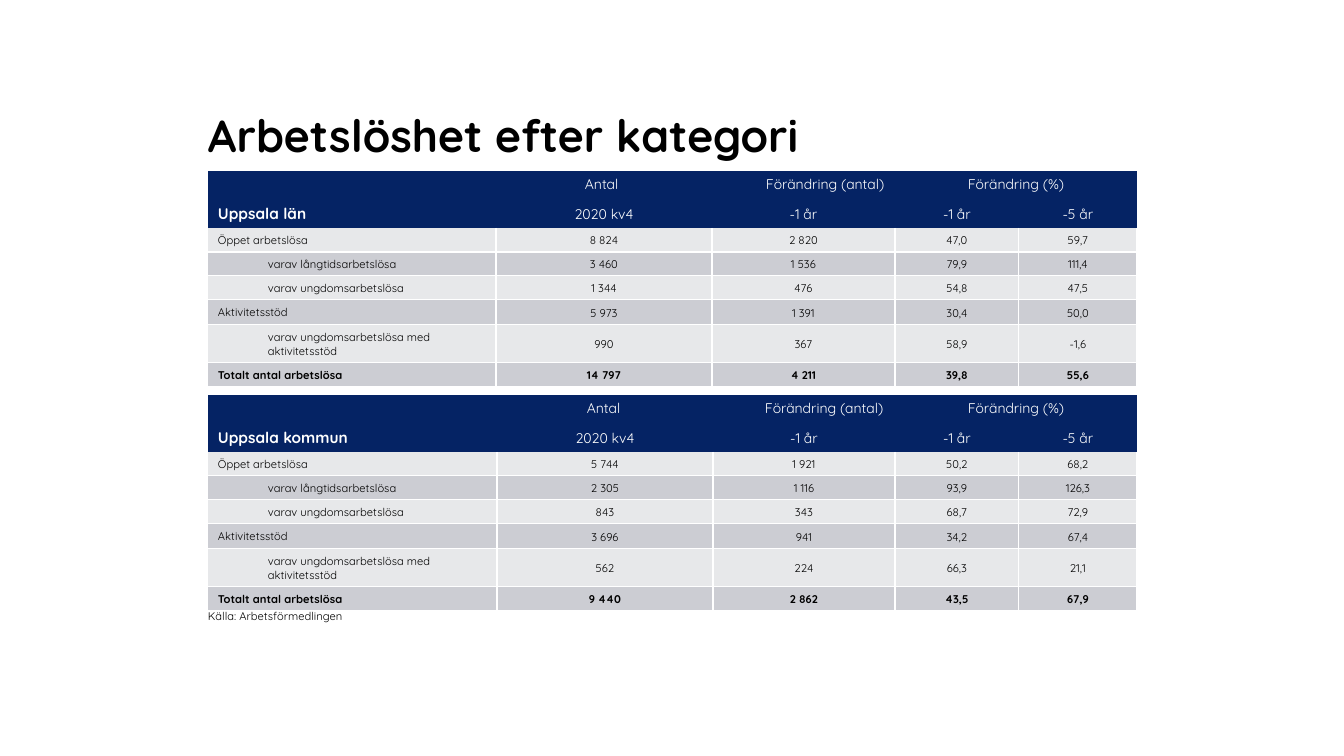
from dataclasses import dataclass

from lxml import etree
from pptx import Presentation
from pptx.dml.color import RGBColor
from pptx.enum.text import MSO_ANCHOR, MSO_AUTO_SIZE, PP_ALIGN
from pptx.oxml.ns import qn
from pptx.slide import Slide
from pptx.table import _Cell
from pptx.text.text import _Paragraph
from pptx.util import Emu, Pt

LEFT, CENTER = PP_ALIGN.LEFT, PP_ALIGN.CENTER
TOP, MIDDLE, BOTTOM = MSO_ANCHOR.TOP, MSO_ANCHOR.MIDDLE, MSO_ANCHOR.BOTTOM
GROW = MSO_AUTO_SIZE.SHAPE_TO_FIT_TEXT
SLIDE_WIDTH, SLIDE_HEIGHT = 1344, 756
SCALE = 12192000 / SLIDE_WIDTH


@dataclass(frozen=True)
class Theme:
    font: str = "Quicksand"
    black: str = "000000"
    white: str = "FFFFFF"
    navy: str = "052364"
    light: str = "E7E8EA"
    dark: str = "CCCDD3"
    title_size: int = 32
    region_size: int = 11
    header_size: int = 10
    body_size: int = 8
    border: int = 1


@dataclass(frozen=True)
class Category:
    name: str
    indented: bool = False
    bold: bool = False


@dataclass(frozen=True)
class Region:
    name: str
    top: int
    columns: tuple[int, ...]
    count_inset: int
    change_tab: int
    values: tuple[tuple[str, ...], ...]


THEME = Theme()
TABLE_LEFT = 208
ROW_HEIGHTS = (28, 29, 24, 24, 24, 25, 38, 24)
TEXT_INSETS = (10, 5, 10, 5)
NUMBER_INSETS = (1, 1, 1, 0)
INDENT = 50
PERIODS = ("2020 kv4", "-1 år", "-1 år", "-5 år")
CATEGORIES = (
    Category("Öppet arbetslösa"),
    Category("varav långtidsarbetslösa", indented=True),
    Category("varav ungdomsarbetslösa", indented=True),
    Category("Aktivitetsstöd"),
    Category("varav ungdomsarbetslösa med aktivitetsstöd", indented=True),
    Category("Totalt antal arbetslösa", bold=True),
)
REGIONS = (
    Region("Uppsala län", 171, (288, 216, 183, 124, 118), 89, 181, (
        ("8 824", "2 820", "47,0", "59,7"),
        ("3 460", "1 536", "79,9", "111,4"),
        ("1 344", "476", "54,8", "47,5"),
        ("5 973", "1 391", "30,4", "50,0"),
        ("990", "367", "58,9", "-1,6"),
        ("14 797", "4 211", "39,8", "55,6"),
    )),
    Region("Uppsala kommun", 395, (289, 216, 182, 124, 118), 90, 178, (
        ("5 744", "1 921", "50,2", "68,2"),
        ("2 305", "1 116", "93,9", "126,3"),
        ("843", "343", "68,7", "72,9"),
        ("3 696", "941", "34,2", "67,4"),
        ("562", "224", "66,3", "21,1"),
        ("9 440", "2 862", "43,5", "67,9"),
    )),
)


def px(length: int) -> Emu:
    return Emu(round(length * SCALE))


def write(para: _Paragraph, text: str, size: int, color: str, bold: bool = False) -> None:
    para.text = text
    for span in para.runs:
        span.font.name = THEME.font
        span.font.size = Pt(size)
        span.font.bold = bold
        span.font.color.rgb = RGBColor.from_string(color)


def draw_borders(cell: _Cell, sides: str) -> None:
    properties = cell._tc.get_or_add_tcPr()
    for position, side in enumerate("LRTB"):
        line = etree.Element(qn(f"a:ln{side}"), w=str(Pt(THEME.border)))
        if side in sides:
            fill = etree.SubElement(line, qn("a:solidFill"))
            etree.SubElement(fill, qn("a:srgbClr"), val=THEME.white)
        else:
            etree.SubElement(line, qn("a:noFill"))
        properties.insert(position, line)


def style_cell(cell: _Cell, fill: str, sides: str = "") -> None:
    cell.fill.solid()
    cell.fill.fore_color.rgb = RGBColor.from_string(fill)
    draw_borders(cell, sides)
    ending = etree.SubElement(cell.text_frame.paragraphs[0]._p, qn("a:endParaRPr"))
    ending.set("sz", str(THEME.body_size * 100))


def fill_cell(cell: _Cell, text: str, size: int, color: str, bold: bool = False,
              number: bool = False) -> _Paragraph:
    insets = NUMBER_INSETS if number else TEXT_INSETS
    cell.margin_left, cell.margin_top, cell.margin_right, cell.margin_bottom = map(px, insets)
    cell.vertical_anchor = MIDDLE if number else TOP
    para = cell.text_frame.paragraphs[0]
    write(para, text, size, color, bold)
    para.alignment = CENTER if number else LEFT
    return para


def draw_region(page: Slide, region: Region) -> None:
    frame = page.shapes.add_table(
        len(ROW_HEIGHTS), len(region.columns), px(TABLE_LEFT), px(region.top),
        px(sum(region.columns)), px(sum(ROW_HEIGHTS)))
    table = frame.table
    table.first_row = table.horz_banding = False
    for column, width in zip(table.columns, region.columns):
        column.width = px(width)
    for row, height in zip(table.rows, ROW_HEIGHTS):
        row.height = px(height)
    for row in range(2):
        for column in range(len(region.columns)):
            style_cell(table.cell(row, column), THEME.navy)
    for column in (1, 3):
        table.cell(0, column).merge(table.cell(0, column + 1))

    counts = table.cell(0, 1)
    para = counts.text_frame.paragraphs[0]
    tabs = etree.SubElement(para._p.get_or_add_pPr(), qn("a:tabLst"))
    etree.SubElement(tabs, qn("a:tab"), pos=str(px(region.change_tab)), algn="l")
    fill_cell(counts, "Antal\tFörändring (antal)", THEME.header_size, THEME.white)
    counts.margin_left = px(region.count_inset)
    percent = fill_cell(table.cell(0, 3), "Förändring (%)", THEME.header_size, THEME.white)
    percent.alignment = CENTER
    fill_cell(table.cell(1, 0), region.name, THEME.region_size, THEME.white, bold=True)
    for column, period in enumerate(PERIODS, 1):
        fill_cell(table.cell(1, column), period, THEME.header_size, THEME.white, number=True)

    for index, (category, values) in enumerate(zip(CATEGORIES, region.values)):
        fill = THEME.dark if index % 2 else THEME.light
        for column, text in enumerate((category.name, *values)):
            cell = table.cell(index + 2, column)
            sides = "RB" + ("T" if index else "") + ("L" if column else "")
            style_cell(cell, fill, sides)
            para = fill_cell(cell, text, THEME.body_size, THEME.black,
                             category.bold, number=column > 0)
            if category.indented and column == 0:
                para.level = 1
                para._p.get_or_add_pPr().set("marL", str(px(INDENT)))
                para._p.get_or_add_pPr().set("indent", "0")


def draw_title(page: Slide) -> None:
    box = page.shapes.add_textbox(px(TABLE_LEFT), px(38), px(929), px(123))
    frame = box.text_frame
    frame.word_wrap = True
    frame.vertical_anchor = BOTTOM
    frame.margin_left = frame.margin_top = frame.margin_right = frame.margin_bottom = 0
    write(frame.paragraphs[0], "Arbetslöshet efter kategori",
          THEME.title_size, THEME.black, bold=True)


def draw_source(page: Slide) -> None:
    box = page.shapes.add_textbox(px(198), px(604), px(165), px(24))
    box.text_frame.word_wrap = False
    box.text_frame.auto_size = GROW
    write(box.text_frame.paragraphs[0], "Källa: Arbetsförmedlingen",
          THEME.body_size, THEME.black)


def main() -> None:
    deck = Presentation()
    deck.slide_width, deck.slide_height = px(SLIDE_WIDTH), px(SLIDE_HEIGHT)
    page = deck.slides.add_slide(deck.slide_layouts[6])
    draw_title(page)
    for region in REGIONS:
        draw_region(page, region)
    draw_source(page)
    deck.save("out.pptx")


if __name__ == "__main__":
    main()
